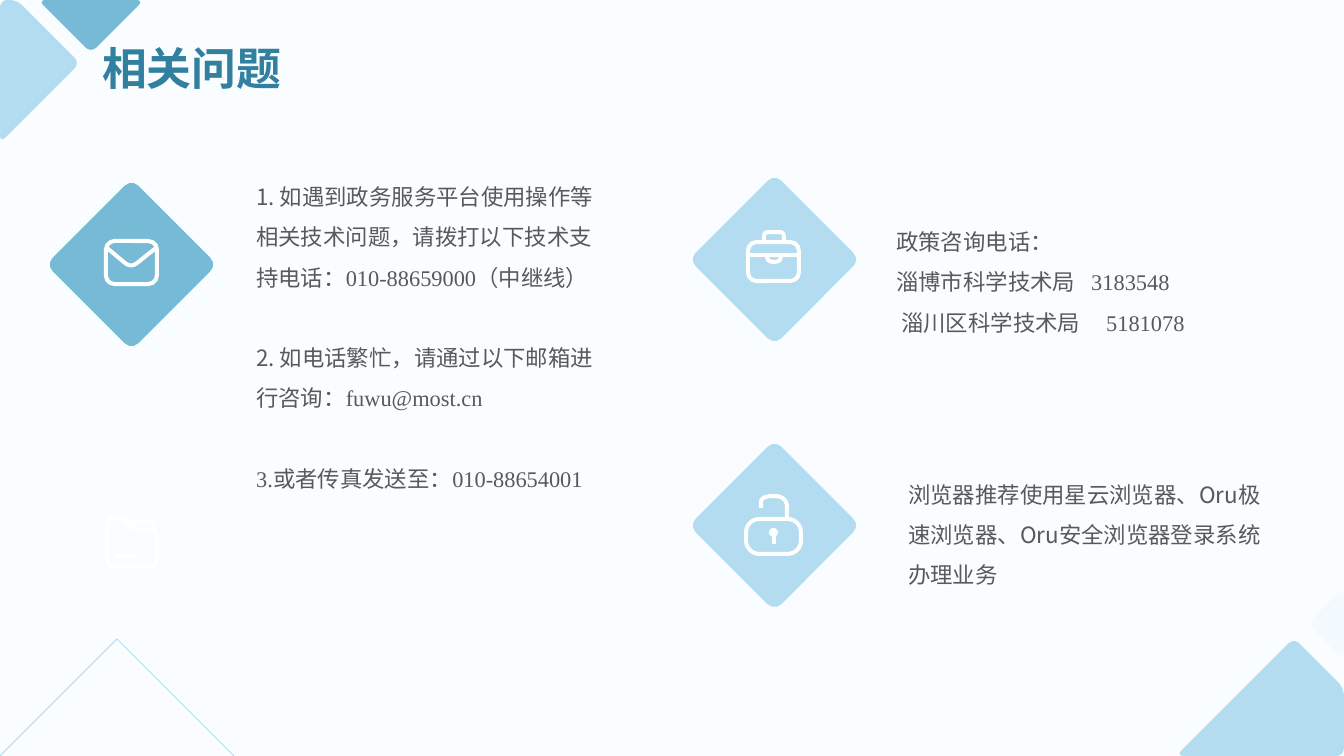
from dataclasses import dataclass
from math import hypot

from lxml import etree
from pptx import Presentation
from pptx.dml.color import RGBColor
from pptx.enum.shapes import MSO_CONNECTOR, MSO_SHAPE
from pptx.enum.text import MSO_AUTO_SIZE
from pptx.oxml.ns import qn
from pptx.util import Emu, Pt


@dataclass(frozen=True)
class Theme:
    bg: str = "FAFDFF"
    title: str = "31809F"
    body: str = "595959"
    deep: str = "77BAD5"
    light: str = "B3DCF0"
    pale: str = "F2F9FF"
    white: str = "FFFFFF"
    sans: str = "Noto Sans CJK SC"
    serif: str = "Times New Roman"
    title_size: int = 24
    body_size: int = 12


T = Theme()
DIAMOND = 121  # side of a diamond before its turn
STROKE = 4     # icon line width


def px(n):
    return Emu(round(n * 914400 / 134.4))


def rgb(c):
    return RGBColor.from_string(c)


def paint(sp, fill=None, line=None, width=STROKE):
    sp.shadow.inherit = False
    if fill:
        sp.fill.solid()
        sp.fill.fore_color.rgb = rgb(fill)
    else:
        sp.fill.background()
    if line:
        sp.line.color.rgb = rgb(line)
        sp.line.width = px(width)
    else:
        sp.line.fill.background()


def add_preset(s, kind, box, adj=None, **look):
    sp = s.shapes.add_shape(kind, *map(px, box))
    if adj is not None:
        sp.adjustments[0] = adj
    paint(sp, **look)
    return sp


def round_corners(pts, radius, closed):
    """Replace each corner by a sampled quadratic curve."""
    out = []
    for i, (x, y) in enumerate(pts):
        if not closed and i in (0, len(pts) - 1):
            out.append((x, y))
            continue
        ends = []
        for nx, ny in (pts[i - 1], pts[(i + 1) % len(pts)]):
            d = hypot(nx - x, ny - y)
            k = min(radius / d, 0.5)
            ends.append((x + (nx - x) * k, y + (ny - y) * k))
        (ax, ay), (bx, by) = ends
        for step in range(9):
            t = step / 8
            u = 1 - t
            out.append((u * u * ax + 2 * u * t * x + t * t * bx,
                        u * u * ay + 2 * u * t * y + t * t * by))
    return out


def add_outline(s, pts, radius=0, closed=True, at=(0, 0), **look):
    if radius:
        pts = round_corners(pts, radius, closed)
    pts = [(px(at[0] + x), px(at[1] + y)) for x, y in pts]
    fb = s.shapes.build_freeform(*pts[0], scale=1.0)
    fb.add_line_segments(pts[1:], close=closed)
    paint(fb.convert_to_shape(), **look)


def add_line(s, at, x1, y1, x2, y2):
    x, y = at
    ln = s.shapes.add_connector(MSO_CONNECTOR.STRAIGHT, px(x + x1), px(y + y1),
                                px(x + x2), px(y + y2))
    ln.line.color.rgb = rgb(T.white)
    ln.line.width = px(STROKE)
    etree.SubElement(ln._element.spPr, qn("a:effectLst"))


def add_run(p, text, size=T.body_size, color=T.body, font=T.sans, bold=False):
    r = p.add_run()
    r.text = text
    f = r.font
    f.size, f.bold, f.name = Pt(size), bold, font
    f.color.rgb = rgb(color)
    etree.SubElement(r._r.get_or_add_rPr(), qn("a:ea"), typeface=T.sans)


def add_text(s, box, paragraphs, spacing=1.5, gap=0, wrap=True, **fmt):
    """Each paragraph is (runs, indent, tab); a run is (text, font)."""
    tf = s.shapes.add_textbox(*map(px, box)).text_frame
    tf.word_wrap = wrap
    tf.auto_size = MSO_AUTO_SIZE.NONE
    for i, (runs, indent, tab) in enumerate(paragraphs):
        p = tf.paragraphs[0] if i == 0 else tf.add_paragraph()
        p.line_spacing = spacing
        if i and gap:
            p.space_before = px(gap)
        pPr = p._p.get_or_add_pPr()
        if indent:
            pPr.set("marL", str(px(indent)))
        if tab:
            tabs = etree.SubElement(pPr, qn("a:tabLst"))
            etree.SubElement(tabs, qn("a:tab"), pos=str(px(tab)), algn="l")
        for text, font in runs:
            add_run(p, text, font=font, **fmt)


# Icons: each is drawn from its top left corner
def mail_icon(s, at):
    x, y = at
    add_preset(s, MSO_SHAPE.ROUNDED_RECTANGLE, (x + 2, y + 2, 51, 43), 0.2, line=T.white)
    add_outline(s, [(3, 9), (27, 29), (52, 9)], 8, False, at, line=T.white)


def briefcase_icon(s, at):
    x, y = at
    add_preset(s, MSO_SHAPE.ROUNDED_RECTANGLE, (x + 2, y + 12, 51, 39), 0.22, line=T.white)
    add_outline(s, [(18, 12), (18, 2), (38, 2), (38, 12)], 5, False, at, line=T.white)
    add_line(s, at, 2, 25, 53, 25)
    add_outline(s, [(21, 25), (22, 32), (34, 32), (35, 25)], 6, False, at, line=T.white)


def folder_icon(s, at):
    add_outline(s, [(2, 2), (21, 2), (28, 14), (52, 14), (52, 50), (2, 50)],
                8, True, at, line=T.white)
    add_outline(s, [(25, 6), (50, 6), (50, 14)], 7, False, at, line=T.white)
    add_line(s, at, 10, 40, 29, 40)


def lock_icon(s, at):
    x, y = at
    add_preset(s, MSO_SHAPE.ROUNDED_RECTANGLE, (x + 2, y + 25, 55, 35), 0.38, line=T.white)
    add_outline(s, [(17, 14), (17, 2), (43, 2), (43, 25)], 13, False, at, line=T.white)
    add_preset(s, MSO_SHAPE.OVAL, (x + 25, y + 34, 9, 9), fill=T.white)
    add_line(s, at, 30, 40, 30, 50)


# Corner decoration
def add_decoration(s, width, height):
    add_outline(s, [(0, 0), (17, 0), (80, 63), (0, 143)], 9, fill=T.light)
    add_outline(s, [(0, height), (117, height - 117), (234, height)],
                closed=False, line=T.light, width=1)
    add_outline(s, [(38, 0), (144, 0), (91, 53)], 9, fill=T.deep)
    add_outline(s, [(width, 588), (width, 660), (width - 36, 624)], 9, fill=T.pale)
    add_outline(s, [(1294, 638), (width, 688), (width, height), (1176, height)],
                9, fill=T.light)


# One question: diamond with icon, and its text
def add_item(s, box, color, icon, icon_offset, text_offset, paragraphs, gap=0):
    x, y, w, h = box
    add_preset(s, MSO_SHAPE.ROUNDED_RECTANGLE, (x, y, DIAMOND, DIAMOND),
               0.079, fill=color).rotation = 45
    icon(s, (x + icon_offset[0], y + icon_offset[1]))
    add_text(s, (x + text_offset[0], y + text_offset[1], w, h), paragraphs, gap=gap)


def main():
    width, height = 1344, 756
    prs = Presentation()
    prs.slide_width, prs.slide_height = px(width), px(height)
    s = prs.slides.add_slide(prs.slide_layouts[6])
    s.background.fill.solid()
    s.background.fill.fore_color.rgb = rgb(T.bg)

    add_decoration(s, width, height)
    add_text(s, (89, 34, 207, 67), [([("相关问题", T.sans)], 0, 0)], spacing=1.0,
             wrap=False, size=T.title_size, color=T.title, bold=True)

    # Technical support
    add_item(s, (71, 204, 384, 339), T.deep, mail_icon, (33, 35), (172, -41), [
        ([("1. 如遇到政务服务平台使用操作等相关技术问题，请拨打以下技术支持电话：", T.sans),
          ("010-88659000", T.serif), ("（中继线）", T.sans)], 0, 0),
        ([("2. 如电话繁忙，请通过以下邮箱进行咨询：", T.sans),
          ("fuwu@most.cn", T.serif)], 0, 0),
        ([("3.或者传真发送至：010-88654001", T.serif)], 0, 0),
    ], gap=40)
    folder_icon(s, (105, 516))

    # Policy advice
    add_item(s, (714, 199, 384, 136), T.light, briefcase_icon, (32, 31), (169, 9), [
        ([("政策咨询电话：", T.sans)], 0, 0),
        ([("淄博市科学技术局\t", T.sans), ("3183548", T.serif)], 0, 195),
        ([("淄川区科学技术局\t5181078", T.serif)], 5, 205),
    ])

    # Browser advice
    add_item(s, (714, 465, 384, 136), T.light, lock_icon, (30, 29), (181, -4), [
        ([("浏览器推荐使用星云浏览器、Oru极速浏览器、Oru安全浏览器登录系统办理业务",
           T.sans)], 0, 0),
    ])
    prs.save("out.pptx")


if __name__ == "__main__":
    main()
